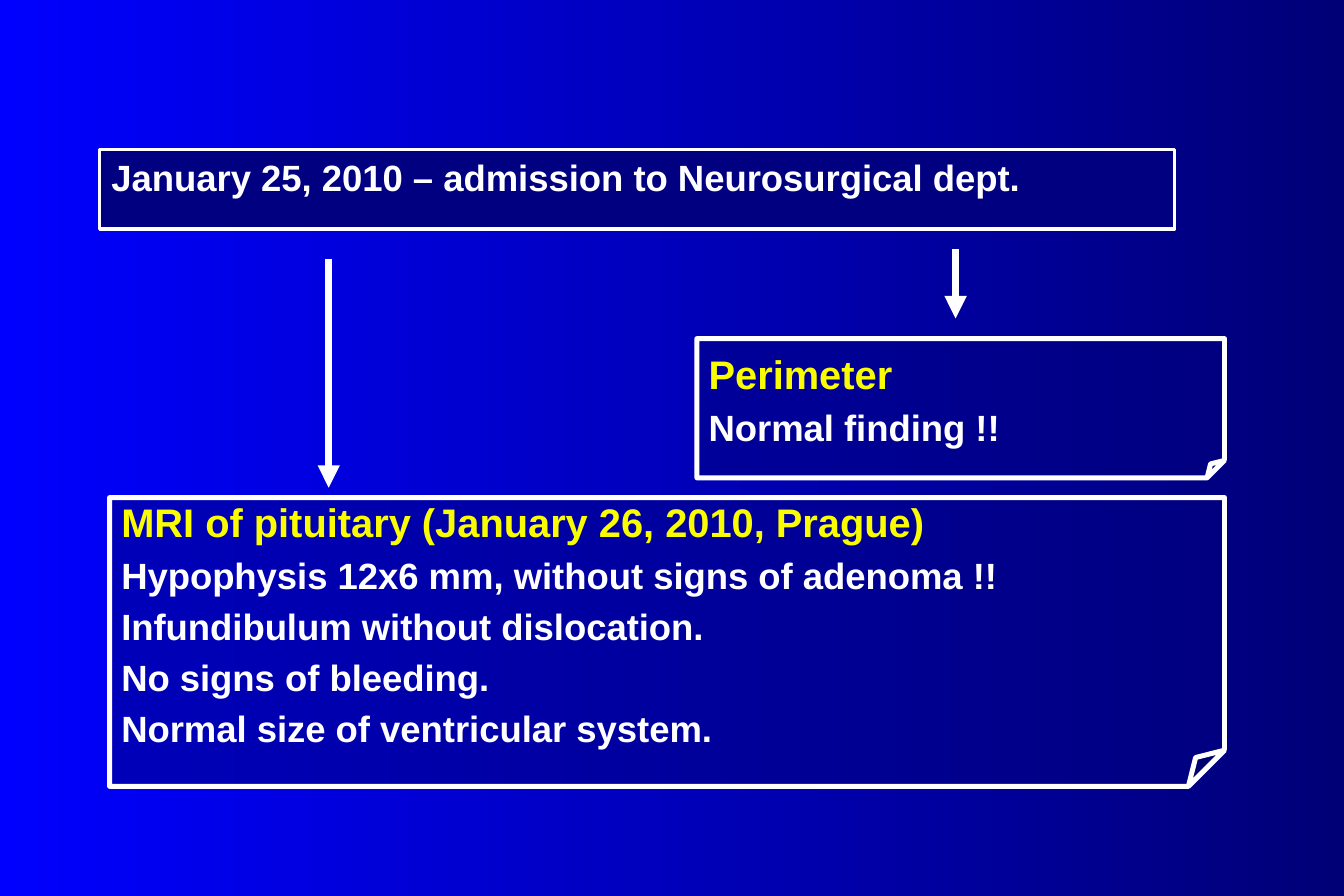
"""Build the slide on the neurosurgical admission and its findings."""
from dataclasses import dataclass

from lxml.etree import SubElement
from pptx import Presentation
from pptx.dml.color import RGBColor
from pptx.enum.shapes import MSO_CONNECTOR, MSO_SHAPE
from pptx.enum.text import MSO_ANCHOR, PP_ALIGN
from pptx.oxml.ns import qn
from pptx.shapes.autoshape import Shape
from pptx.slide import Slide
from pptx.util import Cm, Pt

WHITE = RGBColor(0xFF, 0xFF, 0xFF)
YELLOW = RGBColor(0xFA, 0xFD, 0x00)
NAVY = RGBColor(0x00, 0x00, 0x80)
BRIGHT_BLUE = RGBColor(0x00, 0x00, 0xFF)
DARK_BLUE = RGBColor(0x00, 0x00, 0x76)


@dataclass
class Box:
    """A framed block of text, in centimetres, with an optional heading."""
    left: float
    top: float
    width: float
    height: float
    lines: list[str]
    heading: str = ""


@dataclass
class Arrow:
    """A downward arrow, in centimetres."""
    x: float
    top: float
    bottom: float


ADMISSION = Box(2.12, 3.18, 22.86, 1.69,
                ["January 25, 2010 – admission to Neurosurgical dept."])
FINDINGS = [
    Box(14.82, 7.2, 11.22, 2.96, ["Normal finding !!"], "Perimeter"),
    Box(2.33, 10.58, 23.71, 6.14, [
        "Hypophysis 12x6 mm, without signs of adenoma !!",
        "Infundibulum without dislocation.",
        "No signs of bleeding.",
        "Normal size of ventricular system.",
    ], "MRI of pituitary (January 26, 2010, Prague)"),
]
ARROWS = [Arrow(20.32, 5.29, 6.77), Arrow(6.99, 5.5, 10.37)]


def add_box(page: Slide, box: Box, preset: MSO_SHAPE, line_width: float) -> Shape:
    """Draw a box with its text and return the shape."""
    shape = page.shapes.add_shape(preset, Cm(box.left), Cm(box.top),
                                  Cm(box.width), Cm(box.height))
    shape.shadow.inherit = False
    shape.fill.solid()
    shape.fill.fore_color.rgb = NAVY
    shape.line.color.rgb = WHITE
    shape.line.width = Pt(line_width)
    frame = shape.text_frame
    frame.text = "\n".join([box.heading, *box.lines] if box.heading else box.lines)
    for index, para in enumerate(frame.paragraphs):
        is_heading = bool(box.heading) and index == 0
        para.alignment = PP_ALIGN.LEFT
        spacing = SubElement(para._p.get_or_add_pPr(), qn("a:spcBef"))
        SubElement(spacing, qn("a:spcPct"), val="20000")
        for span in para.runs:
            span.font.name = "Arial"
            span.font.bold = True
            span.font.size = Pt(24 if is_heading else 22)
            span.font.color.rgb = YELLOW if is_heading else WHITE
    return shape


def add_admission(page: Slide, box: Box) -> None:
    """Draw the opaque admission box with text at the top."""
    frame = add_box(page, box, MSO_SHAPE.RECTANGLE, 2).text_frame
    frame.word_wrap = True
    frame.vertical_anchor = MSO_ANCHOR.TOP
    properties = frame.paragraphs[0]._p.get_or_add_pPr()
    properties.set("marL", str(Cm(0.95)))
    properties.set("indent", str(-Cm(0.95)))


def add_finding(page: Slide, box: Box) -> None:
    """Draw a half-transparent note with a folded corner."""
    shape = add_box(page, box, MSO_SHAPE.FOLDED_CORNER, 3)
    shape.text_frame.word_wrap = False
    shape.text_frame.vertical_anchor = MSO_ANCHOR.MIDDLE
    properties = shape._element.spPr
    guides = properties.find(qn("a:prstGeom")).get_or_add_avLst()
    SubElement(guides, qn("a:gd"), name="adj", fmla="val 12500")
    colour = properties.find(qn("a:solidFill")).find(qn("a:srgbClr"))
    SubElement(colour, qn("a:alpha"), val="50000")


def add_arrow(page: Slide, arrow: Arrow) -> None:
    """Draw a thick white arrow pointing down."""
    connector = page.shapes.add_connector(
        MSO_CONNECTOR.STRAIGHT, Cm(arrow.x), Cm(arrow.top), Cm(arrow.x), Cm(arrow.bottom))
    connector.line.color.rgb = WHITE
    connector.line.width = Pt(4.5)
    SubElement(connector.line._get_or_add_ln(), qn("a:tailEnd"), type="triangle")
    SubElement(connector._element.spPr, qn("a:effectLst"))


def paint_background(page: Slide) -> None:
    """Fill the background with a blue gradient from left to right."""
    fill = page.background.fill
    fill.gradient()
    fill.gradient_angle = 0
    for stop, colour in zip(fill.gradient_stops, (BRIGHT_BLUE, DARK_BLUE)):
        stop.color.rgb = colour


def main() -> None:
    """Build and save the deck."""
    deck = Presentation()
    deck.slide_width, deck.slide_height = Cm(28.58), Cm(19.05)
    page = deck.slides.add_slide(deck.slide_layouts[6])
    paint_background(page)
    add_admission(page, ADMISSION)
    for finding in FINDINGS:
        add_finding(page, finding)
    for arrow in ARROWS:
        add_arrow(page, arrow)
    deck.save("out.pptx")


if __name__ == "__main__":
    main()
